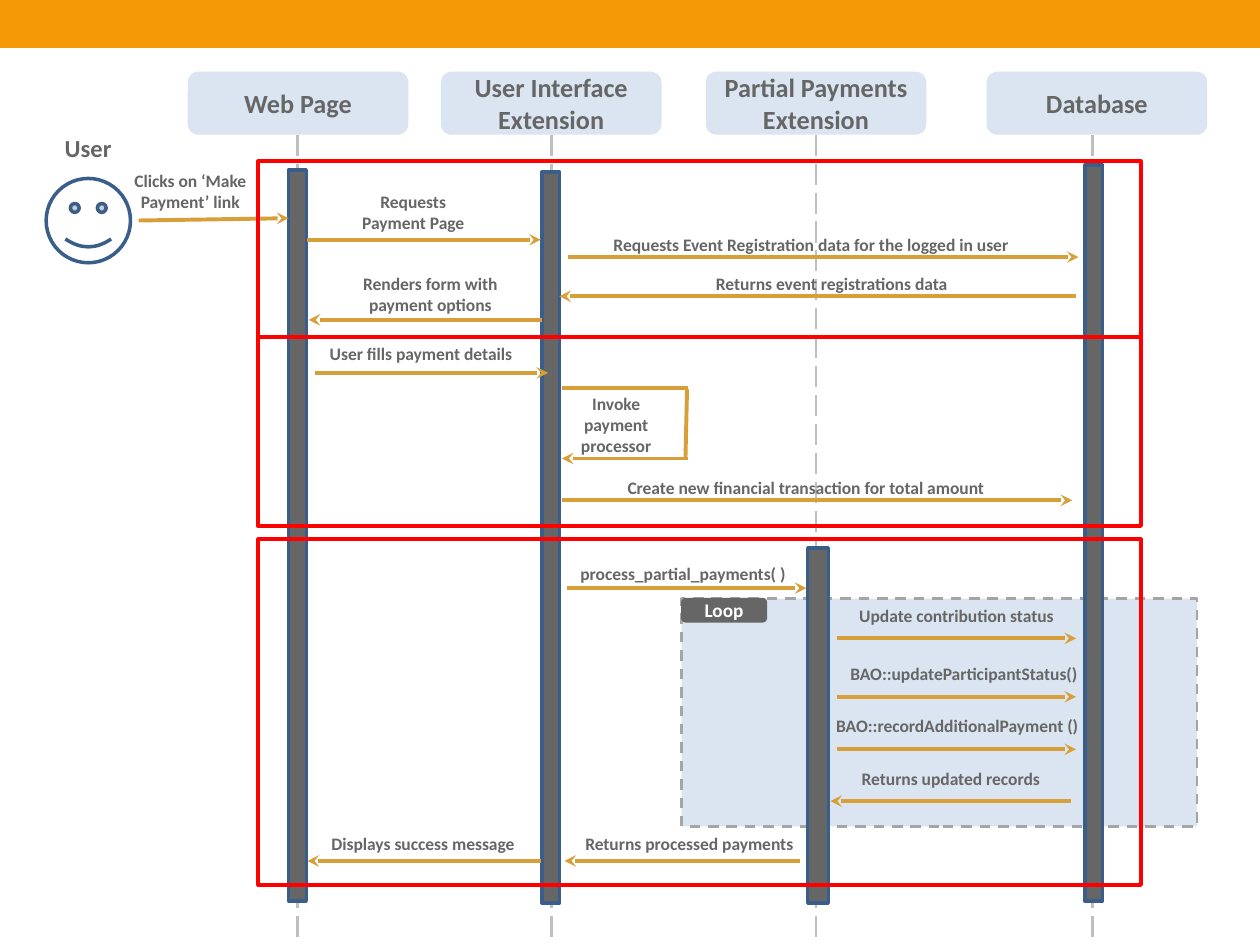
from pptx import Presentation
from pptx.dml.color import RGBColor
from pptx.enum.dml import MSO_LINE
from pptx.enum.shapes import MSO_CONNECTOR, MSO_SHAPE
from pptx.enum.text import MSO_ANCHOR, PP_ALIGN
from pptx.oxml.ns import qn
from pptx.util import Pt
from lxml.etree import SubElement

ORANGE = RGBColor(0xF6, 0x99, 0x06)
GOLD = RGBColor(0xD8, 0x9F, 0x39)
PALE_BLUE = RGBColor(0xDA, 0xE5, 0xF1)
BLUE = RGBColor(0x39, 0x5E, 0x8A)
GRAY = RGBColor(0x66, 0x66, 0x66)
MID_GRAY = RGBColor(0xA5, 0xA5, 0xA5)
LIGHT_GRAY = RGBColor(0xBF, 0xBF, 0xBF)
RED = RGBColor(0xFF, 0x00, 0x00)
WHITE = RGBColor(0xFF, 0xFF, 0xFF)

HEAD_TOP, HEAD_W, HEAD_H = 41, 126, 36
LABEL_H = 19.4
TWO_LINES = 31.7

LANES = [
    ("Web Page", 107.3, 170, 164.9, 97.2, 10.2, 514.8),
    ("User Interface Extension", 252, 315.2, 309.6, 98.4, 10.2, 516),
    ("Partial Payments Extension", 403.3, 466.4, 461.6, 313, 11.8, 516),
    ("Database", 563.8, 624.2, 619.9, 94.4, 10.2, 514.8),
]

MESSAGES = [
    ("Clicks on ‘Make Payment’ link", 64.8, 93.6, 87.8, TWO_LINES, 79.2, 126, 164.9, 124.7),
    ("Requests Payment Page", 192.2, 105.4, 87.8, TWO_LINES, 175.7, 137, 309, 137),
    ("Requests Event Registration data for the logged in user",
     338.4, 130.3, 249.8, LABEL_H, 324.7, 146.9, 616.3, 146.9),
    ("Returns event registrations data", 391.7, 152.6, 167, LABEL_H, 614.9, 169.3, 319.7, 169.3),
    ("Renders form with payment options",
     185.8, 152.6, 120.2, TWO_LINES, 309.6, 182.8, 176.4, 182.8),
    ("User fills payment details", 180, 192.4, 121, LABEL_H, 180, 213.1, 313.2, 213.1),
    ("Create new financial transaction for total amount",
     335.5, 269.3, 249.8, LABEL_H, 321.1, 285.9, 612.7, 285.9),
    ("process_partial_payments( )", 321.1, 318.4, 138.2, LABEL_H, 324, 336.1, 460.8, 336.1),
    ("Update contribution status", 478.8, 342, 135.4, LABEL_H, 478.1, 364.8, 614.9, 364.8),
    ("BAO::updateParticipantStatus()", 473, 375.1, 155.5, LABEL_H, 478.1, 398.2, 614.9, 398.2),
    ("BAO::recordAdditionalPayment ()", 466.6, 405.1, 160.6, LABEL_H, 478.1, 428.2, 614.9, 428.2),
    ("Returns updated records", 481.7, 435.4, 123.1, LABEL_H, 612, 457.8, 474.5, 457.8),
    ("Returns processed payments", 323.3, 472.4, 141.1, LABEL_H, 457.2, 492, 322.6, 492),
    ("Displays success message", 171.4, 472.4, 140.4, LABEL_H, 308.9, 492, 175.7, 492),
]

FRAMES = [(92.2, 100.6), (192.6, 108), (308.2, 197.5)]


class Diagram:
    font = "Calibri"

    def __init__(self, slide):
        self.s = slide

    def set_text(self, sp, text, size, color):
        tf = sp.text_frame
        tf.word_wrap = True
        p = tf.paragraphs[0]
        p.text = text
        p.alignment = PP_ALIGN.CENTER
        p.font.name = self.font
        p.font.size = Pt(size)
        p.font.bold = True
        p.font.color.rgb = color

    def shape(self, kind, x, y, w, h, fill=None, line=None, weight=2, dash=None):
        sp = self.s.shapes.add_shape(kind, Pt(x), Pt(y), Pt(w), Pt(h))
        sp.shadow.inherit = False
        if fill is None:
            sp.fill.background()
        else:
            sp.fill.solid()
            sp.fill.fore_color.rgb = fill
        if line is None:
            sp.line.fill.background()
        else:
            sp.line.color.rgb = line
            sp.line.width = Pt(weight)
            if dash:
                sp.line.dash_style = dash
        return sp

    def tag(self, text, x, y, w, h, fill, size, color, line=None):
        sp = self.shape(MSO_SHAPE.ROUNDED_RECTANGLE, x, y, w, h, fill, line, 0.75)
        sp.text_frame.vertical_anchor = MSO_ANCHOR.MIDDLE
        self.set_text(sp, text, size, color)

    def label(self, text, x, y, w, h, size=10):
        sp = self.s.shapes.add_textbox(Pt(x), Pt(y), Pt(w), Pt(h))
        self.set_text(sp, text, size, GRAY)

    def line(self, x1, y1, x2, y2, color=GOLD, weight=2.25, dash=None, arrow=False):
        sp = self.s.shapes.add_connector(
            MSO_CONNECTOR.STRAIGHT, Pt(x1), Pt(y1), Pt(x2), Pt(y2))
        sp.line.color.rgb = color
        sp.line.width = Pt(weight)
        if dash:
            sp.line.dash_style = dash
        props = sp.element.spPr
        if arrow:
            SubElement(props.find(qn("a:ln")), qn("a:tailEnd"), type="stealth")
        SubElement(props, qn("a:effectLst"))


def main():
    prs = Presentation()
    prs.slide_width, prs.slide_height = Pt(720), Pt(540)
    d = Diagram(prs.slides.add_slide(prs.slide_layouts[6]))
    d.shape(MSO_SHAPE.RECTANGLE, 0, 0, 720, 26.6, ORANGE, ORANGE, 1.5)

    for lane in LANES:
        x = lane[2]
        d.line(x, HEAD_TOP + HEAD_H, x, 538, LIGHT_GRAY, 1.5, MSO_LINE.LONG_DASH)
    d.shape(MSO_SHAPE.RECTANGLE, 389.6, 342, 294.4, 130.3,
            PALE_BLUE, MID_GRAY, 1.5, MSO_LINE.DASH)
    for name, head_x, _, x, top, w, bottom in LANES:
        d.tag(name, head_x, HEAD_TOP, HEAD_W, HEAD_H, PALE_BLUE, 15, GRAY)
        d.shape(MSO_SHAPE.RECTANGLE, x, top, w, bottom - top, GRAY, BLUE)
    d.tag("Loop", 389.6, 342, 48.4, 13.4, GRAY, 11, WHITE, GRAY)

    d.shape(MSO_SHAPE.SMILEY_FACE, 26.4, 102, 48.2, 48.2, WHITE, BLUE)
    d.label("User", 25.2, 72.7, 50.4, 24.5, 14)

    for text, x, y, w, h, *ends in MESSAGES:
        d.line(*ends, arrow=True)
        d.label(text, x, y, w, h)

    d.line(321.1, 221.8, 393.1, 221.8)
    d.line(391.7, 262, 392.6, 222.4)
    d.line(393.1, 262, 321.1, 262, arrow=True)
    d.label("Invoke payment processor", 323.3, 221.2, 57.6, 43.9)

    for top, height in FRAMES:
        d.shape(MSO_SHAPE.RECTANGLE, 147.6, top, 504.4, height, line=RED, weight=2.25)

    prs.save("out.pptx")


if __name__ == "__main__":
    main()
